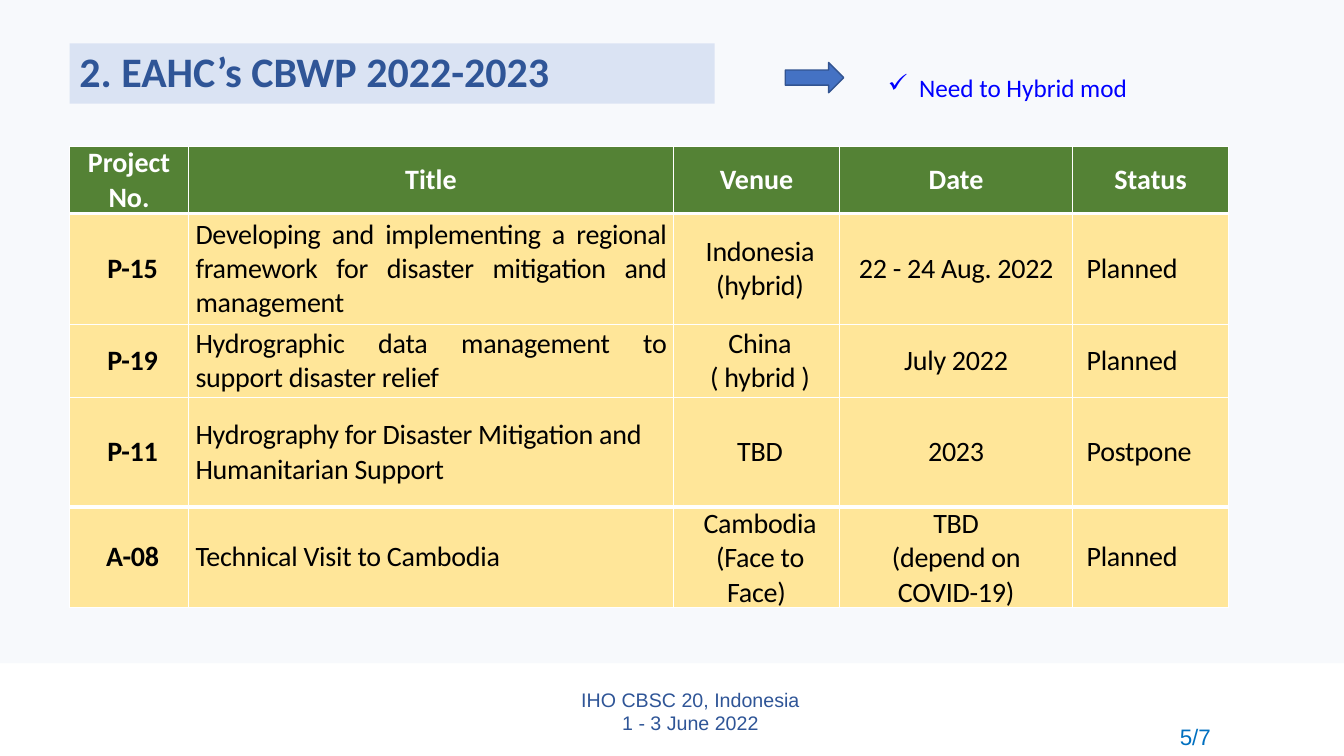
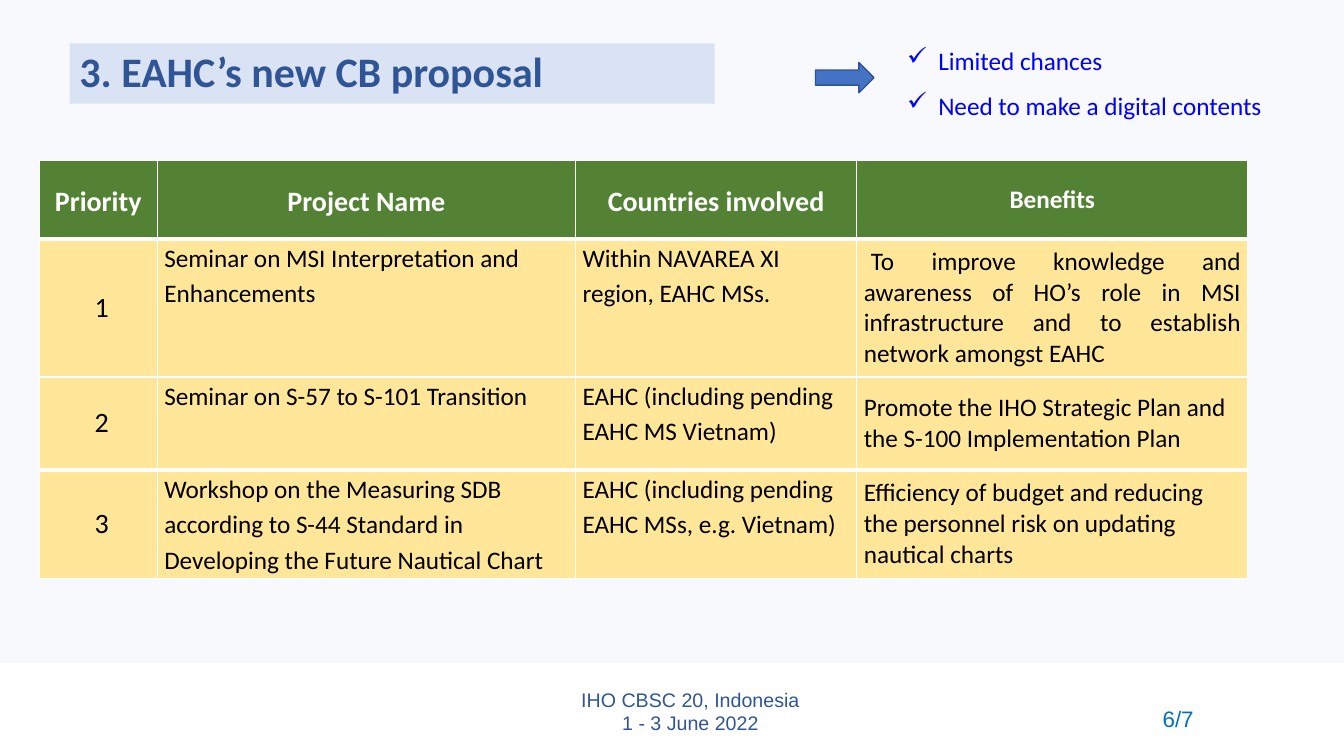
from lxml import etree
from pptx import Presentation
from pptx import util as u
from pptx.dml.color import RGBColor
from pptx.enum import shapes, text
from pptx.oxml import ns

PX = 9144
WHITE, BLACK, GREEN, CREAM = "FFFFFF", "000000", "548235", "FFE699"
PALE, NAVY, BLUE, EDGE = "DAE3F3", "2F5597", "4472C4", "325491"
NOTE, PAGE = "0000FF", "0070C0"
LEFT, CENTER = text.PP_ALIGN.LEFT, text.PP_ALIGN.CENTER
RIGHT, JUSTIFY = text.PP_ALIGN.RIGHT, text.PP_ALIGN.JUSTIFY
TOP, MIDDLE = text.MSO_ANCHOR.TOP, text.MSO_ANCHOR.MIDDLE


def color(value):
    return RGBColor.from_string(value)


def write(frame, words, size=18, font="Calibri", ink=BLACK, bold=False, align=LEFT,
          anchor=MIDDLE, indent=0, leading=1.0, tracking=0, bullet=None):
    frame.vertical_anchor = anchor
    for number, line in enumerate(words.split("\n")):
        para = frame.add_paragraph() if number else frame.paragraphs[0]
        para.alignment = align
        para.line_spacing = leading
        settings = para._p.get_or_add_pPr()
        settings.set("indent", str(indent * PX))
        if bullet:
            settings.set("marL", str(-indent * PX))
            etree.SubElement(settings, ns.qn("a:buChar"), char=bullet)
        span = para.add_run()
        span.text = line
        span.font.name = font
        span.font.size = u.Pt(size)
        span.font.bold = bold
        span.font.color.rgb = color(ink)
        if tracking:
            span._r.get_or_add_rPr().set("spc", str(tracking))


HEADING = dict(size=20, ink=WHITE, bold=True, align=CENTER)
LOOSE = dict(leading=1.15)
KEY = dict(size=20, align=CENTER, indent=7, tracking=-20)
PLAIN = dict(size=20, tracking=-20)
SEMINAR = dict(anchor=TOP, leading=1.15)

slides = [
    dict(
        title="2. EAHC’s CBWP 2022-2023",
        arrow_left=779,
        notes="Need to Hybrid mod", notes_at=(871, 67, 261, 40), notes_leading=1.0,
        page="5/7", page_at=(1052, 712),
        table_at=(69, 145),
        columns=[
            (118, "Project No.", {}, KEY | dict(bold=True)),
            (481, "Title", {}, PLAIN | dict(align=JUSTIFY)),
            (165, "Venue", dict(indent=-5), KEY),
            (231, "Date", {}, PLAIN | dict(align=CENTER)),
            (155, "Status", {}, PLAIN | dict(align=JUSTIFY, indent=7)),
        ],
        heights=[66, 110, 73, 108, 100],
        rows=[
            ["P-15", "Developing and implementing a regional framework for disaster mitigation and management",
             "Indonesia\n(hybrid)", "22 - 24 Aug. 2022", "Planned"],
            ["P-19", "Hydrographic data management to support disaster relief",
             "China\n( hybrid )", "July 2022", "Planned"],
            ["P-11", "Hydrography for Disaster Mitigation and Humanitarian Support",
             "TBD", "2023", "Postpone"],
            ["A-08", "Technical Visit to Cambodia",
             "Cambodia\n(Face to Face)", "TBD\n(depend on COVID-19)", "Planned"],
        ],
        exceptions={(3, 1): dict(align=LEFT)},
    ),
    dict(
        title="3. EAHC’s new CB proposal",
        arrow_left=809,
        notes="Limited chances\nNeed to make a digital contents",
        notes_at=(890, 25, 376, 96), notes_leading=1.5,
        page="6/7", page_at=(1035, 695),
        table_at=(39, 159),
        columns=[
            (117, "Priority", LOOSE, KEY),
            (415, "Project Name", LOOSE, SEMINAR),
            (279, "Countries involved", LOOSE, SEMINAR),
            (388, "Benefits", dict(size=18), {}),
        ],
        heights=[78, 137, 92, 108],
        rows=[
            ["1", "Seminar on MSI Interpretation and Enhancements",
             "Within NAVAREA XI region, EAHC MSs.",
             "To improve knowledge and awareness of HO’s role in MSI infrastructure "
             "and to establish network amongst EAHC"],
            ["2", "Seminar on S-57 to S-101 Transition",
             "EAHC (including pending EAHC MS Vietnam)",
             "Promote the IHO Strategic Plan and the S-100 Implementation Plan"],
            ["3", "Workshop on the Measuring SDB according to S-44 Standard in "
             "Developing the Future Nautical Chart",
             "EAHC (including pending EAHC MSs, e.g. Vietnam)",
             "Efficiency of budget and reducing the personnel risk on updating nautical charts"],
        ],
        exceptions={(1, 3): dict(align=JUSTIFY, indent=7)},
    ),
]

deck = Presentation()
deck.slide_width, deck.slide_height = u.Inches(13.333), u.Inches(7.5)

for content in slides:
    page = deck.slides.add_slide(deck.slide_layouts[6])

    drawn = []
    for kind, place, fill in [
        (shapes.MSO_SHAPE.RECTANGLE, (0, 0, 1333, 658), PALE),
        (shapes.MSO_SHAPE.RECTANGLE, (69, 43, 640, 60), PALE),
        (shapes.MSO_SHAPE.RIGHT_ARROW, (content["arrow_left"], 62, 58, 30), BLUE),
    ]:
        shape = page.shapes.add_shape(kind, *[length * PX for length in place])
        shape.shadow.inherit = False
        shape.fill.solid()
        shape.fill.fore_color.rgb = color(fill)
        shape.line.fill.background()
        drawn.append(shape)
    backdrop, title, arrow = drawn
    backdrop.width = deck.slide_width
    tint = backdrop._element.spPr.find(".//" + ns.qn("a:srgbClr"))
    etree.SubElement(tint, ns.qn("a:alpha"), val="21000")
    arrow.line.color.rgb = color(EDGE)
    arrow.line.width = u.Pt(1)
    title.text_frame.word_wrap = True
    write(title.text_frame, content["title"], size=30, ink=NAVY, bold=True, leading=0.9)

    for words, place, wrap, style in [
        ("IHO CBSC 20, Indonesia\n1 - 3 June 2022", (460, 677, 450, 57), True,
         dict(size=14, font="Arial", ink=NAVY, align=CENTER)),
        (content["page"], (*content["page_at"], 159, 40), True,
         dict(size=16, font="Arial", ink=PAGE, align=RIGHT, anchor=TOP)),
        (content["notes"], content["notes_at"], False,
         dict(ink=NOTE, anchor=TOP, indent=-31, bullet="✓", leading=content["notes_leading"])),
    ]:
        box = page.shapes.add_textbox(*[length * PX for length in place])
        box.text_frame.word_wrap = wrap
        if not wrap:
            box.text_frame.auto_size = text.MSO_AUTO_SIZE.SHAPE_TO_FIT_TEXT
        write(box.text_frame, words, **style)

    columns, heights = content["columns"], content["heights"]
    size = (sum(column[0] for column in columns), sum(heights))
    table = page.shapes.add_table(
        len(heights), len(columns),
        *[length * PX for length in (*content["table_at"], *size)]).table
    table.horz_banding = False
    for column, (width, *_) in zip(table.columns, columns):
        column.width = width * PX
    for row, height in zip(table.rows, heights):
        row.height = height * PX

    last = len(heights) - 1
    for r, line in enumerate([[column[1] for column in columns], *content["rows"]]):
        for c, words in enumerate(line):
            cell = table.cell(r, c)
            cell.margin_left = cell.margin_right = 7 * PX
            cell.margin_top = cell.margin_bottom = 0
            weights = dict(lnL=1, lnR=1, lnT=3 if r in (1, last) else 1,
                           lnB=3 if r in (0, last - 1) else 1)
            for side, weight in weights.items():
                border = etree.SubElement(cell._tc.get_or_add_tcPr(), ns.qn("a:" + side),
                                          w=str(u.Pt(weight)))
                solid = etree.SubElement(border, ns.qn("a:solidFill"))
                etree.SubElement(solid, ns.qn("a:srgbClr"), val=WHITE)
            cell.fill.solid()
            cell.fill.fore_color.rgb = color(CREAM if r else GREEN)
            heading, body = columns[c][2:]
            style = body | content["exceptions"].get((r, c), {}) if r else HEADING | heading
            write(cell.text_frame, words, **style)
            cell.vertical_anchor = style.get("anchor", MIDDLE)

deck.save("out.pptx")
